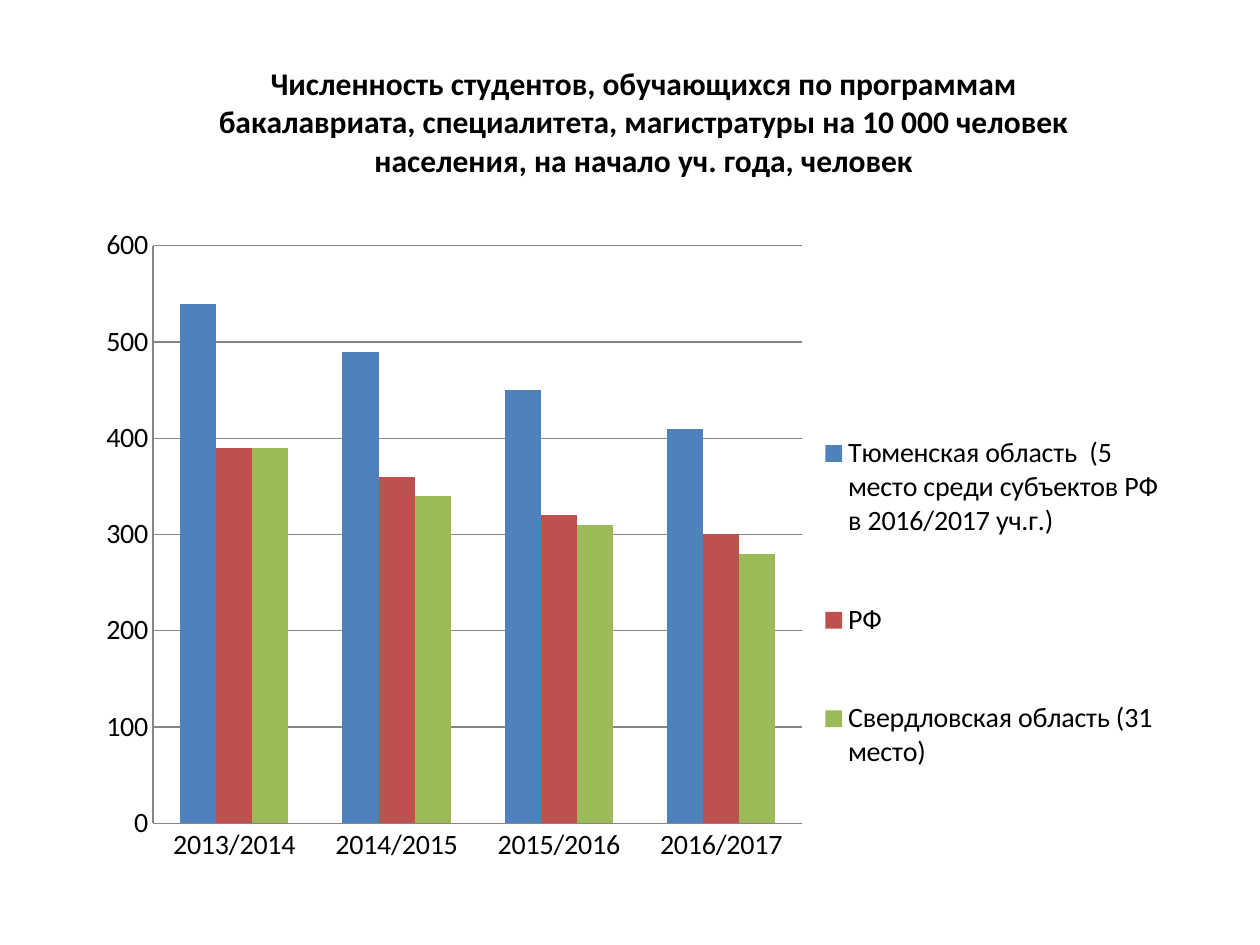
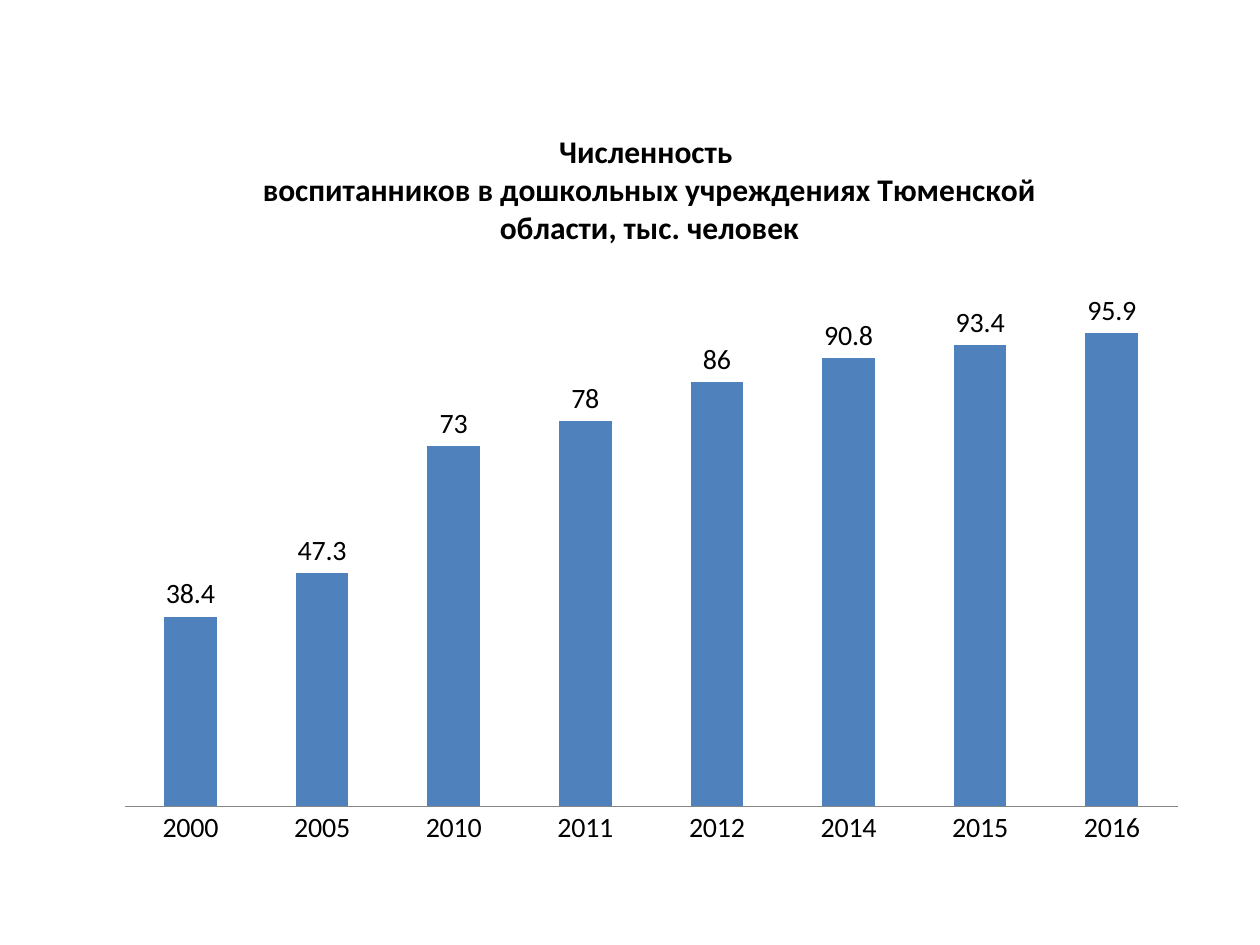
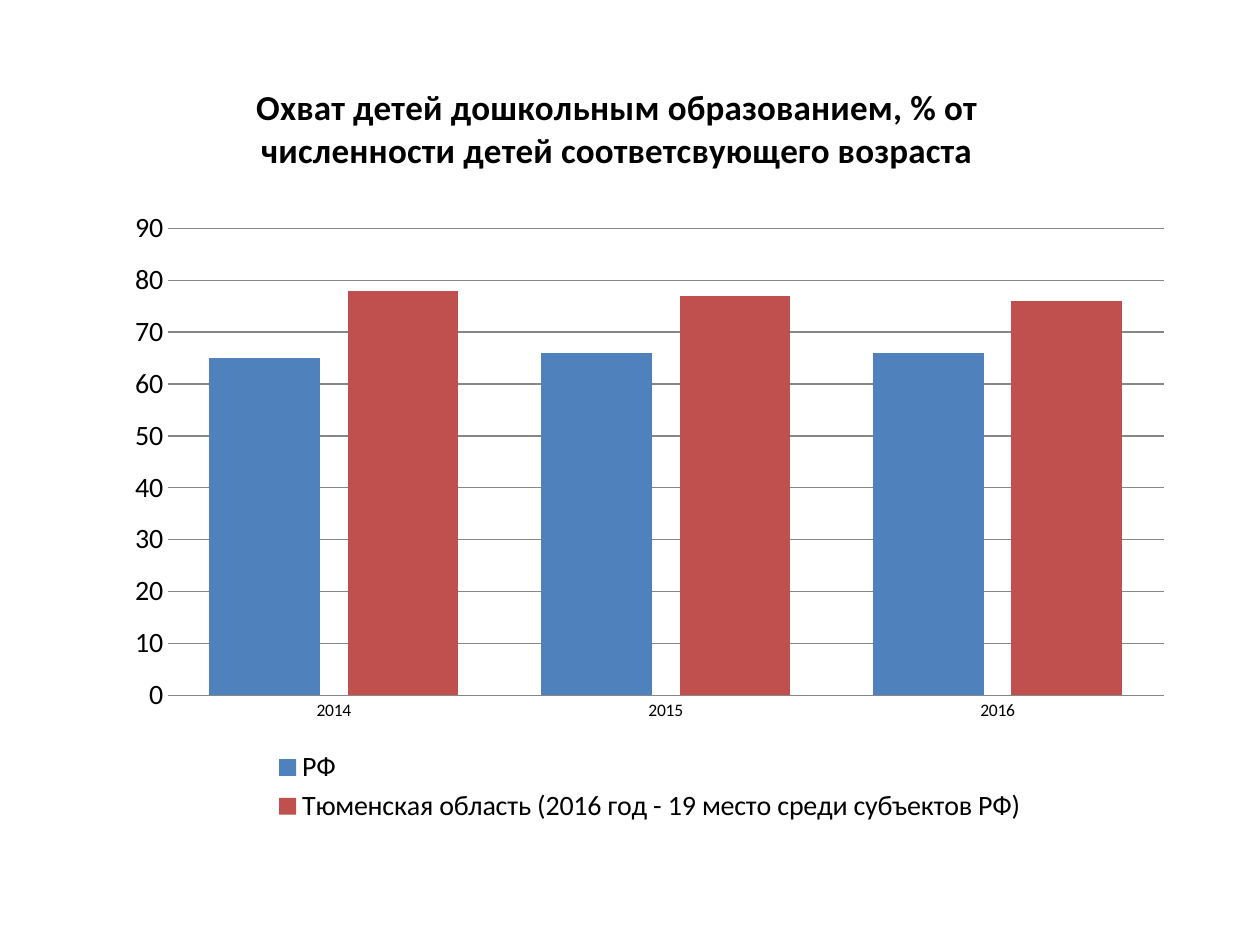
from lxml.etree import SubElement
from pptx import Presentation
from pptx.chart.data import CategoryChartData
from pptx.dml.color import RGBColor
from pptx.enum.chart import XL_CHART_TYPE, XL_LABEL_POSITION, XL_LEGEND_POSITION, XL_TICK_MARK
from pptx.oxml.ns import qn
from pptx.util import Pt

BLACK = RGBColor(0x00, 0x00, 0x00)
GRAY = RGBColor(0x86, 0x86, 0x86)
BLUE = RGBColor(0x4F, 0x81, 0xBD)
RED = RGBColor(0xC0, 0x50, 0x4D)
GREEN = RGBColor(0x9B, 0xBB, 0x59)
FONT = "Calibri"
SMALL_SIZE = 10
LABEL_SIZE = 16
STUDENTS_BOX = (48.25, 31.75, 629.25, 471)
PRESCHOOL_BOX = (60, 60.5, 623.5, 436.5)
COVERAGE_BOX = (65.5, 43.25, 612, 430.5)


def set_layout(element, chart_box, part_box, inner=False):
    for old_layout in element.findall(qn("c:layout")):
        element.remove(old_layout)
    layout = SubElement(element, qn("c:layout"))
    manual = SubElement(layout, qn("c:manualLayout"))
    chart_width, chart_height = chart_box[2:]
    scales = (chart_width, chart_height, chart_width, chart_height)
    values = {"layoutTarget": "inner"} if inner else {}
    values.update(xMode="edge", yMode="edge")
    for name, length, scale in zip("xywh", part_box, scales):
        values[name] = round(length / scale, 4)
    for name, value in values.items():
        SubElement(manual, qn(f"c:{name}")).set("val", str(value))
    overlay = element.find(qn("c:overlay"))
    if overlay is not None:
        overlay.addprevious(layout)
    else:
        element.insert(0, layout)


def style_line(line):
    line.color.rgb = GRAY
    line.width = Pt(0.75)


def add_column_chart(presentation, box, categories, series, gap, overlap, plot_box):
    slide = presentation.slides.add_slide(presentation.slide_layouts[6])
    chart_data = CategoryChartData()
    chart_data.categories = categories
    for name, values, _ in series:
        chart_data.add_series(name, values)
    chart = slide.shapes.add_chart(
        XL_CHART_TYPE.COLUMN_CLUSTERED, *map(Pt, box), chart_data
    ).chart
    chart.font.name = FONT
    chart.font.size = Pt(SMALL_SIZE)
    chart.font.color.rgb = BLACK
    chart.has_legend = False
    plot = chart.plots[0]
    plot.vary_by_categories = False
    plot.gap_width = gap
    plot.overlap = overlap
    for chart_series, (_, _, color) in zip(plot.series, series):
        chart_series.format.fill.solid()
        chart_series.format.fill.fore_color.rgb = color
    plot_area = next(chart._chartSpace.iter(qn("c:plotArea")))
    set_layout(plot_area, box, plot_box, inner=True)
    return chart


def add_title(chart, chart_box, text, size, position):
    chart.has_title = True
    title = chart.chart_title
    title.text_frame.text = text
    for paragraph in title.text_frame.paragraphs:
        for run in paragraph.runs:
            run.font.size = Pt(size)
            run.font.bold = True
            run.font.name = FONT
            run.font.color.rgb = BLACK
    set_layout(title._element, chart_box, position)


def add_legend(chart, chart_box, side, legend_box):
    chart.has_legend = True
    legend = chart.legend
    legend.position = side
    legend.include_in_layout = False
    legend.font.size = Pt(LABEL_SIZE)
    legend.font.name = FONT
    legend.font.color.rgb = BLACK
    set_layout(legend._element, chart_box, legend_box)


def style_axis(axis, size):
    axis.major_tick_mark = XL_TICK_MARK.NONE
    axis.minor_tick_mark = XL_TICK_MARK.NONE
    axis.tick_labels.font.size = Pt(size)
    style_line(axis.format.line)


def style_value_axis(axis, maximum, step):
    style_axis(axis, LABEL_SIZE)
    axis.minimum_scale = 0
    axis.maximum_scale = maximum
    axis.major_unit = step
    axis.has_major_gridlines = True
    style_line(axis.major_gridlines.format.line)


def hide_value_axis(axis, maximum):
    axis.minimum_scale = 0
    axis.maximum_scale = maximum
    axis.has_major_gridlines = False
    axis.visible = False


def show_values(chart):
    plot = chart.plots[0]
    plot.has_data_labels = True
    labels = plot.data_labels
    labels.show_value = True
    labels.position = XL_LABEL_POSITION.OUTSIDE_END
    labels.font.size = Pt(LABEL_SIZE)


def add_students_slide(presentation):
    chart = add_column_chart(
        presentation,
        STUDENTS_BOX,
        ["2013/2014", "2014/2015", "2015/2016", "2016/2017"],
        [
            ("Тюменская область  (5 место среди субъектов РФ в 2016/2017 уч.г.)",
             (540, 490, 450, 410), BLUE),
            ("РФ", (390, 360, 320, 300), RED),
            ("Свердловская область (31 место)", (390, 340, 310, 280), GREEN),
        ],
        150, 0, (39.25, 108.75, 371, 330),
    )
    add_title(
        chart,
        STUDENTS_BOX,
        "Численность студентов, обучающихся по программам бакалавриата, специалитета, "
        "магистратуры на 10 000 человек населения, на начало уч. года, человек",
        18, (73.5, 0.4),
    )
    style_axis(chart.category_axis, LABEL_SIZE)
    style_value_axis(chart.value_axis, 600, 100)
    add_legend(chart, STUDENTS_BOX, XL_LEGEND_POSITION.RIGHT, (418, 181, 201, 264))


def add_preschool_slide(presentation):
    chart = add_column_chart(
        presentation,
        PRESCHOOL_BOX,
        ["2000", "2005", "2010", "2011", "2012", "2014", "2015", "2016"],
        [("Series 1", (38.4, 47.3, 73, 78, 86, 90.8, 93.4, 95.9), BLUE)],
        150, -25, (11.25, 62, 601.75, 338.25),
    )
    add_title(
        chart,
        PRESCHOOL_BOX,
        "Численность \nвоспитанников в дошкольных учреждениях Тюменской области, тыс. человек",
        18, (88, 12),
    )
    style_axis(chart.category_axis, LABEL_SIZE)
    hide_value_axis(chart.value_axis, 120)
    show_values(chart)


def add_coverage_slide(presentation):
    chart = add_column_chart(
        presentation,
        COVERAGE_BOX,
        ["2014", "2015", "2016"],
        [
            ("РФ", (65, 66, 66), BLUE),
            ("Тюменская область (2016 год - 19 место среди субъектов РФ)",
             (78, 77, 76), RED),
        ],
        75, -25, (30.5, 87.25, 569, 267),
    )
    add_title(
        chart,
        COVERAGE_BOX,
        "Охват детей дошкольным образованием, % от численности детей "
        "соответсвующего возраста",
        20, (77.25, 0),
    )
    style_axis(chart.category_axis, SMALL_SIZE)
    style_value_axis(chart.value_axis, 90, 10)
    chart.value_axis.format.line.fill.background()
    add_legend(chart, COVERAGE_BOX, XL_LEGEND_POSITION.BOTTOM, (85.75, 383, 440.5, 47))


def main():
    presentation = Presentation()
    presentation.slide_width = Pt(720)
    presentation.slide_height = Pt(540)
    add_students_slide(presentation)
    add_preschool_slide(presentation)
    add_coverage_slide(presentation)
    presentation.save("out.pptx")


if __name__ == "__main__":
    main()
